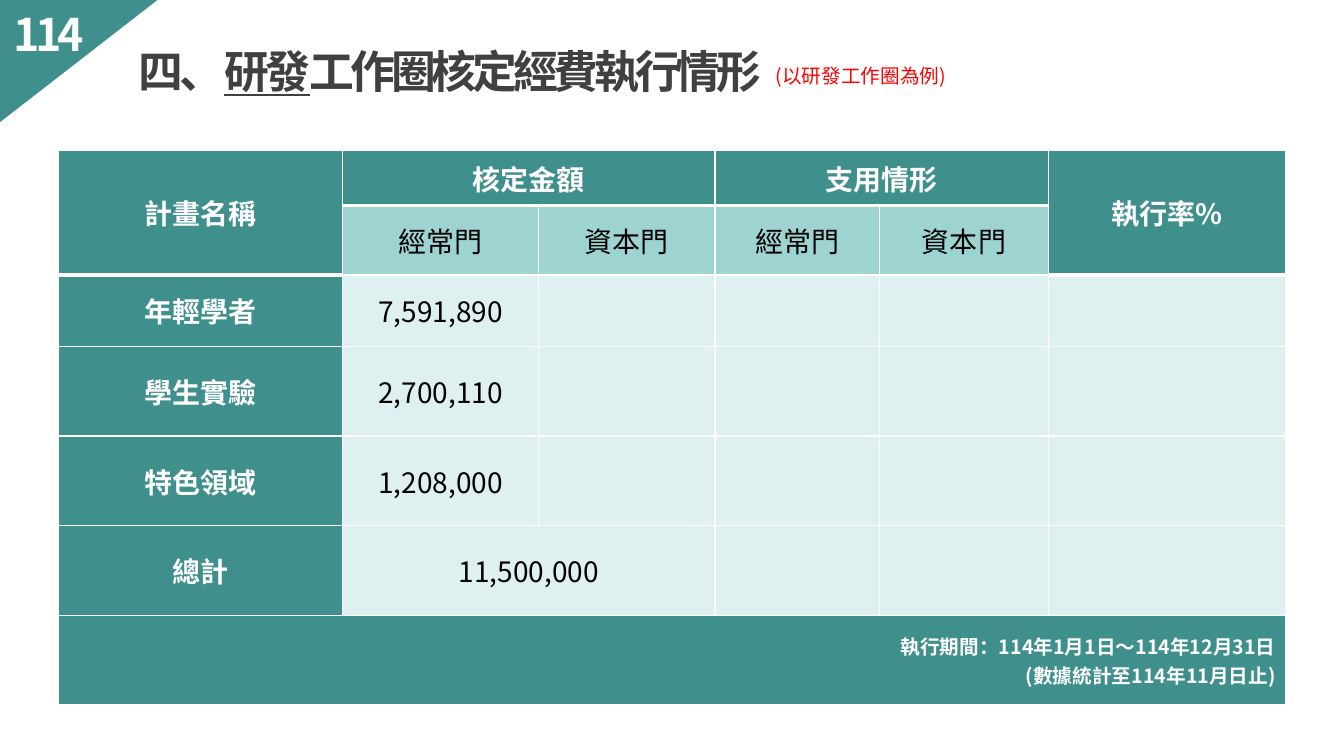
from dataclasses import dataclass

from lxml import etree
from pptx import Presentation
from pptx.dml.color import RGBColor
from pptx.enum.shapes import MSO_SHAPE
from pptx.enum.text import MSO_ANCHOR, MSO_AUTO_SIZE, PP_ALIGN
from pptx.oxml.ns import qn
from pptx.util import Cm, Pt

TEAL = RGBColor(0x3F, 0x90, 0x8C)
MINT = RGBColor(0x9D, 0xD4, 0xD1)
PALE = RGBColor(0xDE, 0xF1, 0xF0)
WHITE = RGBColor(0xFF, 0xFF, 0xFF)
BLACK = RGBColor(0, 0, 0)
DARK = RGBColor(0x40, 0x40, 0x40)
RED = RGBColor(0xFF, 0, 0)
FONT = "Noto Sans CJK SC"

CENTER, LEFT, RIGHT = PP_ALIGN.CENTER, PP_ALIGN.LEFT, PP_ALIGN.RIGHT
MIDDLE, BOTTOM = MSO_ANCHOR.MIDDLE, MSO_ANCHOR.BOTTOM
NO_AUTOFIT = MSO_AUTO_SIZE.NONE
RIGHT_TRIANGLE = MSO_SHAPE.RIGHT_TRIANGLE

COL_WIDTHS = (7.16, 4.95, 4.44, 4.14, 4.27, 5.97)
ROW_HEIGHTS = (1.4, 1.75, 1.8, 2.26, 2.26, 2.26, 2.26)
LAST_ROW, LAST_COL = len(ROW_HEIGHTS) - 1, len(COL_WIDTHS) - 1
ROWS = (
    ("計畫名稱", "核定金額", "", "支用情形", "", "執行率%"),
    ("", "經常門", "資本門", "經常門", "資本門", ""),
    ("年輕學者", "7,591,890"),
    ("學生實驗", "2,700,110"),
    ("特色領域", "1,208,000"),
    ("總計", "11,500,000"),
    ("執行期間：114年1月1日～114年12月31日\n(數據統計至114年11月日止)",),
)
MERGES = (
    ((0, 0), (1, 0)), ((0, 1), (0, 2)), ((0, 3), (0, 4)),
    ((0, 5), (1, 5)), ((5, 1), (5, 2)), ((6, 0), (6, 5)),
)


@dataclass(frozen=True)
class CellStyle:
    fill: RGBColor
    color: RGBColor
    bold: bool
    size: int = 20
    align: PP_ALIGN = CENTER


HEADER = CellStyle(TEAL, WHITE, True)
SUBHEADER = CellStyle(MINT, BLACK, False)
VALUE = CellStyle(PALE, BLACK, False)
FOOTER = CellStyle(TEAL, WHITE, True, 14, RIGHT)


def add_run(p, text: str, color: RGBColor, **font_format):
    r = p.add_run()
    r.text = text
    r.font.color.rgb = color
    r.font.name = FONT
    for name, value in font_format.items():
        setattr(r.font, name, value)
    etree.SubElement(r.font._element, qn("a:ea"), typeface=FONT)
    return r


def write_heading(sp, parts: list[tuple[str, bool]], color: RGBColor) -> None:
    """Fill a shape with tightly spaced heading runs, each (text, underlined)."""
    tf = sp.text_frame
    frame_format = dict(word_wrap=True, auto_size=NO_AUTOFIT, vertical_anchor=BOTTOM,
                        margin_left=0, margin_right=0, margin_top=0, margin_bottom=0)
    for name, value in frame_format.items():
        setattr(tf, name, value)
    p = tf.paragraphs[0]
    p.alignment, p.line_spacing, p.space_before = LEFT, Pt(50), Pt(6)
    pPr = p._p.get_or_add_pPr()
    pPr.set("marL", str(Cm(1.98)))
    pPr.set("indent", "0")
    for text, underlined in parts:
        r = add_run(p, text, color, size=Pt(32), bold=True, underline=underlined)
        r.font._element.set("spc", "-300")


def has_heavy_bottom(row: int, col: int) -> bool:
    return row == 0 or (row == 1 and col in (0, LAST_COL))


def set_borders(cell, row: int, col: int) -> None:
    tcPr = cell._tc.get_or_add_tcPr()
    widths = {
        "lnL": 1,
        "lnR": 1,
        "lnT": 3 if has_heavy_bottom(row - 1, col) else 1,
        "lnB": 3 if has_heavy_bottom(row, col) else 1,
    }
    for i, (side, width) in enumerate(widths.items()):
        ln = etree.Element(qn(f"a:{side}"), w=str(Pt(width)))
        fill = etree.SubElement(ln, qn("a:solidFill"))
        etree.SubElement(fill, qn("a:srgbClr"), val=str(WHITE))
        tcPr.insert(i, ln)


def style_for(row: int, col: int) -> CellStyle:
    if row == LAST_ROW:
        return FOOTER
    if row == 0 or col == 0 or (row == 1 and col == LAST_COL):
        return HEADER
    return SUBHEADER if row == 1 else VALUE


def write_cell(cell, text: str, style: CellStyle) -> None:
    cell.fill.solid()
    cell.fill.fore_color.rgb = style.fill
    cell.vertical_anchor = MIDDLE
    if not text:
        return
    tf = cell.text_frame
    for i, line in enumerate(text.split("\n")):
        p = tf.add_paragraph() if i else tf.paragraphs[0]
        p.alignment = style.align
        add_run(p, line, style.color, size=Pt(style.size), bold=style.bold)


def add_budget_table(s) -> None:
    table = s.shapes.add_table(
        len(ROW_HEIGHTS), len(COL_WIDTHS), Cm(1.47), Cm(3.78),
        Cm(sum(COL_WIDTHS)), Cm(sum(ROW_HEIGHTS))).table
    for column, width in zip(table.columns, COL_WIDTHS):
        column.width = Cm(width)
    for row, height in zip(table.rows, ROW_HEIGHTS):
        row.height = Cm(height)
    for r, texts in enumerate(ROWS):
        for c in range(len(COL_WIDTHS)):
            cell = table.cell(r, c)
            write_cell(cell, texts[c] if c < len(texts) else "", style_for(r, c))
            set_borders(cell, r, c)
    for first, last in MERGES:
        table.cell(*first).merge(table.cell(*last))


def main() -> None:
    prs = Presentation()
    prs.slide_width, prs.slide_height = Cm(33.87), Cm(19.05)
    s = prs.slides.add_slide(prs.slide_layouts[5])

    corner = s.shapes.add_shape(RIGHT_TRIANGLE, Cm(0.45), Cm(-0.45), Cm(3.08), Cm(3.97))
    corner.rotation = 90
    corner.shadow.inherit = False
    corner.fill.solid()
    corner.fill.fore_color.rgb = TEAL
    corner.line.fill.background()

    year = s.shapes.add_textbox(Cm(-1.65), Cm(0.33), Cm(4.75), Cm(1.19))
    write_heading(year, [("114", False)], WHITE)

    title = s.shapes.title
    title.left, title.top, title.width, title.height = Cm(1.52), Cm(1.27), Cm(25.37), Cm(1.19)
    write_heading(title, [("四、", False), ("研發", True),
                          ("工作圈核定經費執行情形", False)], DARK)

    note = s.shapes.add_textbox(Cm(19.3), Cm(1.57), Cm(4.83), Cm(0.86))
    note.text_frame.word_wrap = True
    p = note.text_frame.paragraphs[0]
    p.line_spacing = 0.85
    add_run(p, "(以研發工作圈為例)", RED, size=Pt(14))

    add_budget_table(s)
    prs.save("out.pptx")


if __name__ == "__main__":
    main()
